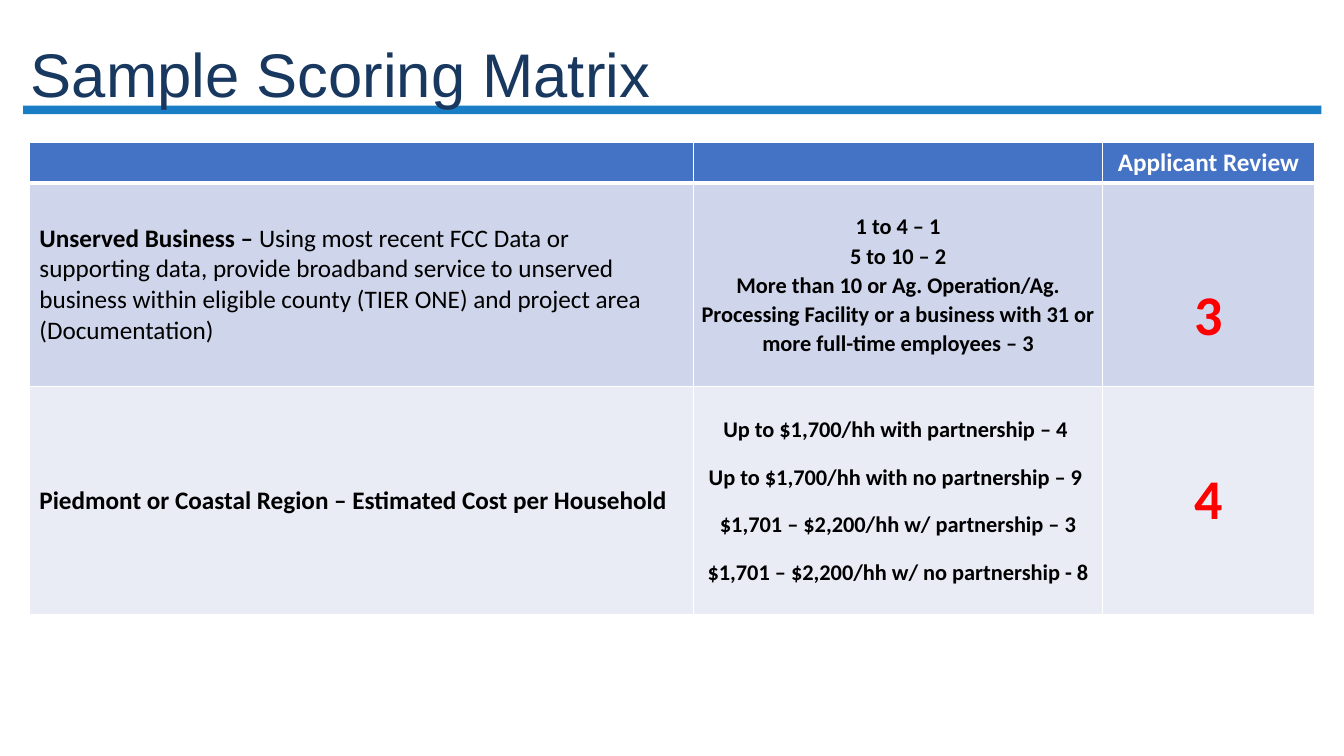
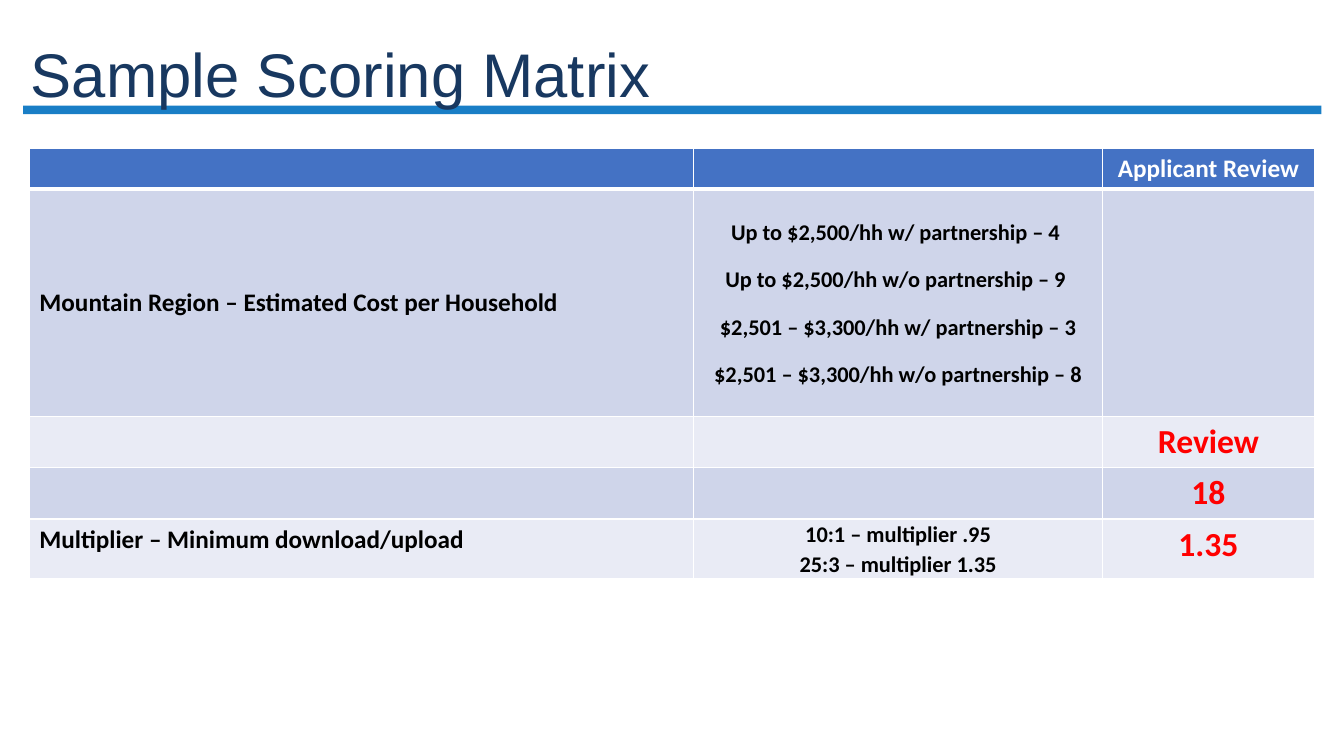
import pptx
import pptx.util
import pptx.dml.color
import pptx.enum.shapes
import pptx.enum.text
import pptx.oxml.ns
import lxml.etree

Cm = pptx.util.Cm
Pt = pptx.util.Pt
Rgb = pptx.dml.color.RGBColor.from_string
Align = pptx.enum.text.PP_ALIGN
Anchor = pptx.enum.text.MSO_ANCHOR
qn = pptx.oxml.ns.qn
Sub = lxml.etree.SubElement


class Theme:
    navy, rule, head = "183860", "0070C0", "4472C4"
    bands = ["E9EBF5", "CFD5EA"]
    white, black, red = "FFFFFF", "000000", "FF0000"
    serif, body = "Arial", "Calibri"
    title, label, option, total, score = 44, 18, 16, 24, 40


def style(run, size, color, bold=True, face=Theme.body):
    run.font.size = Pt(size)
    run.font.color.rgb = Rgb(color)
    run.font.bold = bold
    run.font.name = face


def border(cell, side, width):
    line = Sub(cell._tc.get_or_add_tcPr(), qn("a:ln" + side), w=str(Pt(width)))
    Sub(Sub(line, qn("a:solidFill")), qn("a:srgbClr"), val=Theme.white)


# Content: height, lead, rest, options, gap between options, score, score size
top = (1.03, "", "", [], 0, "Applicant Review", Theme.label)
tables = [
    (3.58, [
        top,
        (5.13, "Unserved Business – ",
         "Using most recent FCC Data or supporting data, provide broadband "
         "service to unserved business within eligible county (TIER ONE) and "
         "project area (Documentation)",
         ["1 to 4 – 1", "5 to 10 – 2",
          "More than 10 or Ag. Operation/Ag. Processing Facility or a business "
          "with 31 or more full-time employees – 3"], 0, "3", Theme.score),
        (5.74, "Piedmont or Coastal Region – Estimated Cost per Household", "",
         ["Up to $1,700/hh with partnership – 4 ",
          "Up to $1,700/hh with no partnership – 9 ",
          "$1,701 – $2,200/hh w/ partnership – 3",
          "$1,701 – $2,200/hh w/ no partnership - 8"], 13, "4", Theme.score),
    ]),
    (3.73, [
        top,
        (5.74, "Mountain Region – Estimated Cost per Household", "",
         ["Up to $2,500/hh w/ partnership – 4 ",
          "Up to $2,500/hh w/o partnership – 9 ",
          "$2,501 – $3,300/hh w/ partnership – 3",
          "$2,501 – $3,300/hh w/o partnership – 8"], 13, "", Theme.score),
        (1.29, "", "", [], 0, "Review", Theme.total),
        (1.29, "", "", [], 0, "18", Theme.total),
        (1.5, "Multiplier – Minimum download/upload", "",
         ["10:1 – multiplier .95", "25:3 – multiplier 1.35"], 0,
         "1.35", Theme.total),
    ]),
]
widths = [16.74, 10.31, 5.33]

deck = pptx.Presentation()
deck.slide_width, deck.slide_height = Cm(33.87), Cm(19.05)

for y, rows in tables:
    slide = deck.slides.add_slide(deck.slide_layouts[6])

    # Rule under the title
    rule = slide.shapes.add_connector(
        pptx.enum.shapes.MSO_CONNECTOR.STRAIGHT,
        Cm(0.58), Cm(2.77), Cm(33.3), Cm(2.77))
    rule.line.width = Pt(6)
    rule.line.color.rgb = Rgb(Theme.rule)
    Sub(next(rule.line._ln.iter(qn("a:srgbClr"))), qn("a:alpha"), val="90000")
    Sub(rule._element.spPr, qn("a:effectLst"))

    # Title
    box = slide.shapes.add_textbox(Cm(0.53), Cm(1.02), Cm(31.01), Cm(1.88))
    frame = box.text_frame
    frame.word_wrap = True
    frame.vertical_anchor = Anchor.MIDDLE
    frame.text = "Sample Scoring Matrix"
    frame.paragraphs[0].line_spacing = 0.9
    style(frame.paragraphs[0].runs[0], Theme.title, Theme.navy, False, Theme.serif)

    # Scoring table
    grid = slide.shapes.add_table(
        len(rows), len(widths), Cm(0.74), Cm(y),
        Cm(sum(widths)), Cm(sum(row[0] for row in rows))).table
    for col, width in zip(grid.columns, widths):
        col.width = Cm(width)

    for i, (height, lead, rest, options, gap, score, size) in enumerate(rows):
        grid.rows[i].height = Cm(height)
        cells = list(grid.rows[i].cells)
        for cell in cells:
            for side in "LRTB":
                heavy = (i, side) in [(0, "B"), (1, "T")]
                border(cell, side, 3 if heavy else 1)
            cell.fill.solid()
            cell.fill.fore_color.rgb = Rgb(Theme.bands[i % 2] if i else Theme.head)
            cell.vertical_anchor = Anchor.MIDDLE
        name, scale, mark = cells

        # Criterion
        for text, bold in [(lead, True), (rest, False)]:
            if text:
                run = name.text_frame.paragraphs[0].add_run()
                run.text = text
                style(run, Theme.label, Theme.black, bold)

        # Points scale
        if options:
            scale.margin_left = scale.margin_right = Cm(0.18)
            scale.margin_top = scale.margin_bottom = 0
            scale.text_frame.text = "\n".join(options)
            for n, par in enumerate(scale.text_frame.paragraphs):
                par.alignment = Align.CENTER
                par.line_spacing = 1.07
                if n and gap:
                    par.space_before = Pt(gap)
                style(par.runs[0], Theme.option, Theme.black)

        # Score
        if score:
            mark.text_frame.text = score
            par = mark.text_frame.paragraphs[0]
            par.alignment = Align.CENTER
            style(par.runs[0], size, Theme.red if i else Theme.white)
        if size == Theme.total:
            name.vertical_anchor = mark.vertical_anchor = Anchor.TOP
        if score == "3":
            mark.margin_top = Cm(1.7)

deck.save("out.pptx")
